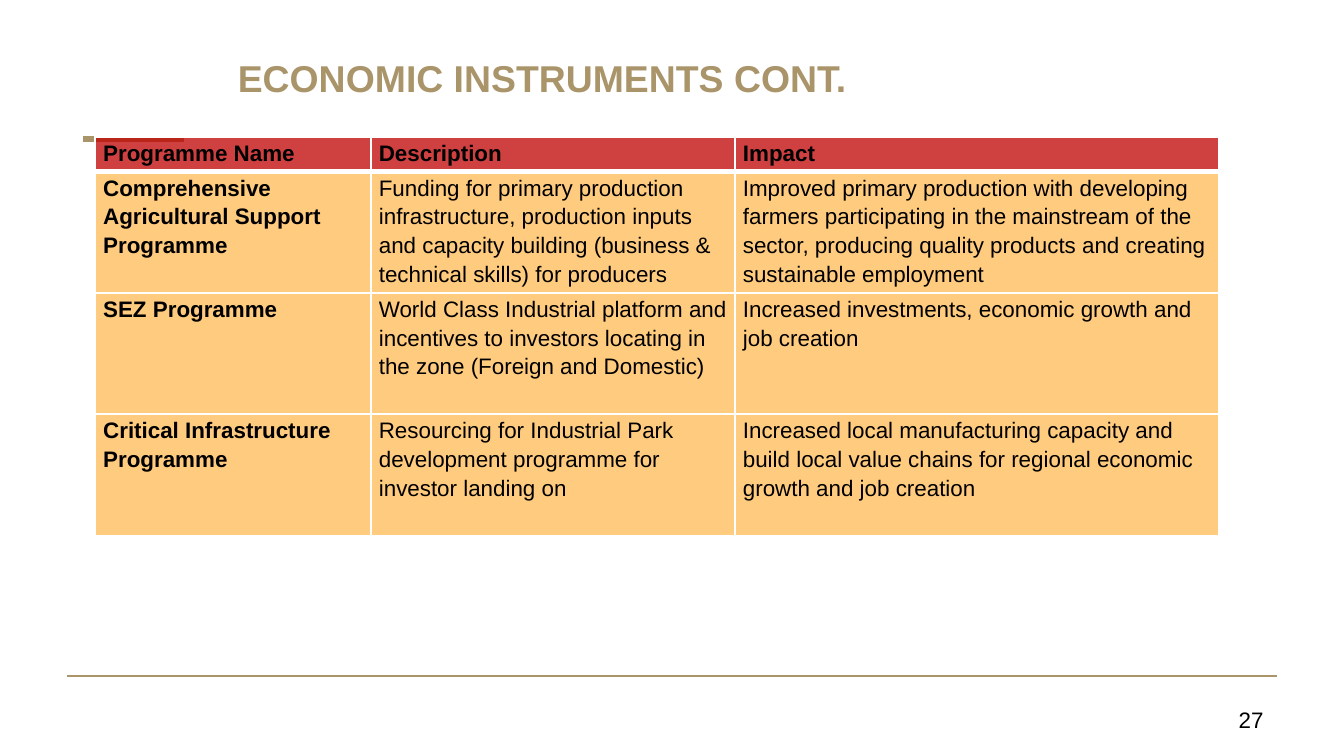
from lxml import etree
from pptx import Presentation
from pptx import util as u
from pptx.dml.color import RGBColor
from pptx.enum import shapes, text
from pptx.oxml.ns import qn

GOLD, BLACK, WHITE = "AA956B", "000000", "FFFFFF"
COLS = (5.21, 6.88, 9.14)
ROWS = (0.66, 2.29, 2.29, 2.29)
PROGRAMMES = (
    ("Programme Name", "Description", "Impact"),
    ("Comprehensive Agricultural Support Programme",
     "Funding for primary production infrastructure, production inputs and "
     "capacity building (business & technical skills) for producers",
     "Improved primary production with developing farmers participating in the "
     "mainstream of the sector, producing quality products and creating "
     "sustainable employment"),
    ("SEZ Programme",
     "World Class Industrial platform and incentives to investors locating in "
     "the zone (Foreign and Domestic)",
     "Increased investments, economic growth and job creation"),
    ("Critical Infrastructure Programme",
     "Resourcing for Industrial Park development programme for investor landing on",
     "Increased local manufacturing capacity and build local value chains for "
     "regional economic growth and job creation"),
)


def rgb(value):
    """Turn a hex string into a colour."""
    return RGBColor.from_string(value)


def assign(obj, **values):
    """Set each named attribute on an object."""
    for name, value in values.items():
        setattr(obj, name, value)


def write(tf, words, size, color, bold=False, **layout):
    """Write one formatted paragraph into a text frame."""
    p = tf.paragraphs[0]
    assign(p, **layout)
    r = p.add_run()
    r.text = words
    assign(r.font, name="Arial", size=u.Pt(size), bold=bold)
    r.font.color.rgb = rgb(color)


def add_rule(s, x1, x2, y, width):
    """Draw a horizontal gold rule."""
    sp = s.shapes.add_connector(shapes.MSO_CONNECTOR.STRAIGHT,
                                u.Cm(x1), u.Cm(y), u.Cm(x2), u.Cm(y))
    sp.line.color.rgb = rgb(GOLD)
    sp.line.width = u.Pt(width)
    etree.SubElement(sp._element.spPr, qn("a:effectLst"))


def add_title(s, left, top, width, height):
    """Place and format the title placeholder."""
    sp = s.shapes.title
    assign(sp, left=u.Cm(left), top=u.Cm(top), width=u.Cm(width), height=u.Cm(height))
    sp.text_frame.vertical_anchor = text.MSO_ANCHOR.MIDDLE
    write(sp.text_frame, "ECONOMIC INSTRUMENTS CONT.", 20, GOLD, True,
          alignment=text.PP_ALIGN.LEFT)


def set_borders(cell, widths):
    """Give a cell white borders with a width in points for each side."""
    tcPr = cell._tc.get_or_add_tcPr()
    for side, width in widths.items():
        ln = etree.SubElement(tcPr, qn(f"a:ln{side}"), w=str(u.Pt(width)))
        fill = etree.SubElement(ln, qn("a:solidFill"))
        etree.SubElement(fill, qn("a:srgbClr"), val=WHITE)


def set_fill(cell, color, opacity):
    """Fill a cell with a colour at a percentage of opacity."""
    cell.fill.solid()
    cell.fill.fore_color.rgb = rgb(color)
    clr = cell._tc.tcPr.find(".//" + qn("a:solidFill") + "/" + qn("a:srgbClr")
                             + f"[@val='{color}']")
    etree.SubElement(clr, qn("a:alpha"), val=str(opacity * 1000))


def add_programmes(s, left, top):
    """Build the table of programmes."""
    tbl = s.shapes.add_table(len(ROWS), len(COLS), u.Cm(left), u.Cm(top),
                             u.Cm(sum(COLS)), u.Cm(sum(ROWS))).table
    tbl.horz_banding = False
    for col, width in zip(tbl.columns, COLS):
        col.width = u.Cm(width)
    for i, (row, height) in enumerate(zip(tbl.rows, ROWS)):
        row.height = u.Cm(height)
        for j, cell in enumerate(row.cells):
            assign(cell, margin_left=u.Cm(0.15), margin_right=u.Cm(0.15),
                   margin_top=0, margin_bottom=0)
            set_borders(cell, {"L": 1, "R": 1, "T": 3 if i == 1 else 1,
                               "B": 3 if i == 0 else 1})
            set_fill(cell, *(("C00000", 75) if i == 0 else ("FF9900", 50)))
            write(cell.text_frame, PROGRAMMES[i][j], 12, BLACK, i == 0 or j == 0,
                  line_spacing=1.15, space_after=u.Pt(6))


def add_page_number(s, left, top, width, height):
    """Place the page number at the bottom right."""
    tf = s.shapes.add_textbox(u.Cm(left), u.Cm(top), u.Cm(width), u.Cm(height)).text_frame
    assign(tf, word_wrap=True, vertical_anchor=text.MSO_ANCHOR.MIDDLE)
    write(tf, "27", 12, BLACK, alignment=text.PP_ALIGN.RIGHT)


def main():
    """Build and save the slide."""
    prs = Presentation()
    assign(prs, slide_width=u.Cm(25.4), slide_height=u.Cm(14.29))
    s = prs.slides.add_slide(prs.slide_layouts[5])
    add_rule(s, 1.57, 3.48, 2.62, 3.25)
    add_rule(s, 1.27, 24.13, 12.78, 1)
    add_title(s, 4.24, 0.81, 17.15, 1.32)
    add_programmes(s, 1.8, 2.59)
    add_page_number(s, 18.21, 13.23, 5.92, 0.76)
    prs.save("out.pptx")


if __name__ == "__main__":
    main()
